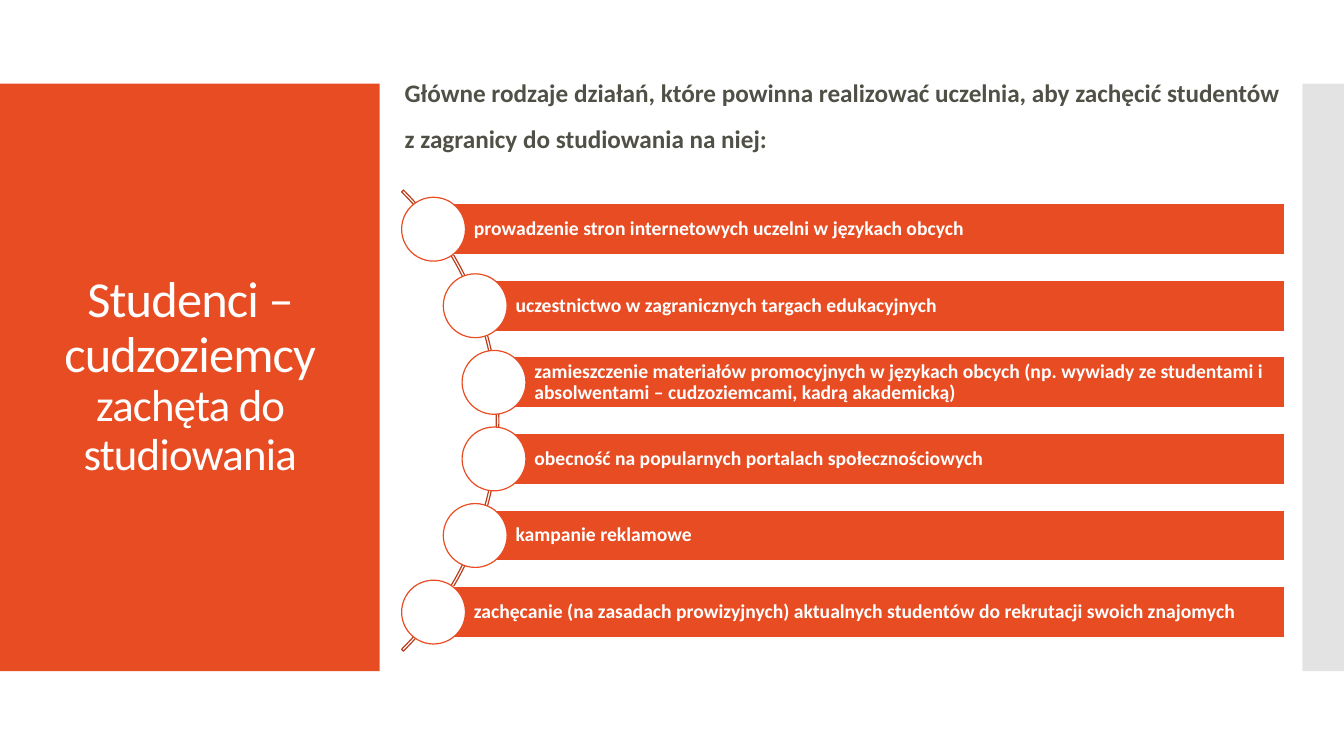
from math import sqrt
from lxml.etree import SubElement
from pptx import Presentation
from pptx.dml.color import RGBColor
from pptx.enum.shapes import MSO_SHAPE
from pptx.enum.text import MSO_ANCHOR, PP_ALIGN
from pptx.oxml.ns import qn
from pptx.util import Pt

COLORS = {"orange": "E84C22", "rust": "BA3D1B", "white": "FFFFFF",
          "grey": "C8C8C8", "text": "505046"}
FONT = "Calibri"
ACTIONS = [
    "prowadzenie stron internetowych uczelni w językach obcych",
    "uczestnictwo w zagranicznych targach edukacyjnych",
    "zamieszczenie materiałów promocyjnych w językach obcych (np. wywiady ze "
    "studentami i absolwentami – cudzoziemcami, kadrą akademicką)",
    "obecność na popularnych portalach społecznościowych",
    "kampanie reklamowe",
    "zachęcanie (na zasadach prowizyjnych) aktualnych studentów do rekrutacji "
    "swoich znajomych",
]


def rgb(name):
    return RGBColor.from_string(COLORS[name])


def add_box(s, kind, x, y, w, h, fill=None, line=None):
    sp = s.shapes.add_shape(kind, Pt(x), Pt(y), Pt(w), Pt(h))
    sp.shadow.inherit = False
    if fill:
        sp.fill.solid()
        sp.fill.fore_color.rgb = rgb(fill)
    else:
        sp.fill.background()
    if line:
        sp.line.color.rgb = rgb(line)
        sp.line.width = Pt(0.85)
    else:
        sp.line.fill.background()
    return sp


def add_run(p, text, size, color, bold=False):
    r = p.add_run()
    r.text = text
    r.font.name = FONT
    r.font.size = Pt(size)
    r.font.bold = bold
    r.font.color.rgb = rgb(color)
    return r


def add_text(s, x, y, w, h):
    tf = s.shapes.add_textbox(Pt(x), Pt(y), Pt(w), Pt(h)).text_frame
    tf.word_wrap = True
    return tf


def title_panel(s, x, y, w, h):
    add_box(s, MSO_SHAPE.RECTANGLE, x, y, w, h, "orange")
    tf = add_text(s, x + 20, y + 28.5, w - 39.5, h - 57.5)
    tf.vertical_anchor = MSO_ANCHOR.MIDDLE
    p = tf.paragraphs[0]
    p.alignment = PP_ALIGN.CENTER
    p.line_spacing = 0.9
    first = add_run(p, "Studenci – cudzoziemcy", 36, "white")
    p.add_line_break()
    second = add_run(p, "zachęta do studiowania", 32, "white")
    for r in (first, second):
        r._r.get_or_add_rPr().set("spc", "-60")


def side_strip(s, x, y, w, h):
    sp = add_box(s, MSO_SHAPE.RECTANGLE, x, y, w, h, "grey")
    color = sp._element.spPr.find(qn("a:solidFill"))[0]
    SubElement(color, qn("a:alpha")).set("val", "50000")


def heading(s, x, y, w, h):
    p = add_text(s, x, y, w, h).paragraphs[0]
    p.line_spacing = 1.5
    add_run(p, "Główne rodzaje działań, które powinna realizować uczelnia, aby "
               "zachęcić studentów z zagranicy do studiowania na niej:",
            18, "text", True)


def action_bar(s, x, y, w, h, text):
    sp = add_box(s, MSO_SHAPE.RECTANGLE, x, y, w, h, "orange", "white")
    tf = sp.text_frame
    tf.word_wrap = True
    tf.vertical_anchor = MSO_ANCHOR.MIDDLE
    tf.margin_left = Pt(28.8)
    tf.margin_right = tf.margin_top = tf.margin_bottom = Pt(2.8)
    p = tf.paragraphs[0]
    p.alignment = PP_ALIGN.LEFT
    p.line_spacing = 0.9
    add_run(p, text, 14, "white", True)


def action_list(s, x, y, w, h):
    arc_size, orbit, bar_h, circle = 465.8, 231, 36.5, 45.6
    cx, cy = x - 163.8, y + h / 2
    arc = add_box(s, MSO_SHAPE.BLOCK_ARC, cx - arc_size / 2, cy - arc_size / 2,
                  arc_size, arc_size, line="rust")
    for i, value in enumerate((189, 27, 0.004)):
        arc.adjustments[i] = value
    pitch = (h - circle) / (len(ACTIONS) - 1)
    for i, text in enumerate(ACTIONS):
        mid = y + circle / 2 + i * pitch
        left = cx + sqrt(orbit ** 2 - (mid - cy) ** 2)
        action_bar(s, left, mid - bar_h / 2, x + w - left, bar_h, text)
        add_box(s, MSO_SHAPE.OVAL, left - circle / 2, mid - circle / 2,
                circle, circle, "white", "orange")


def main():
    prs = Presentation()
    prs.slide_width, prs.slide_height = Pt(960), Pt(540)
    s = prs.slides.add_slide(prs.slide_layouts[6])
    title_panel(s, 0, 59.8, 271.2, 419.6)
    side_strip(s, 930.4, 59.8, 29.6, 419.6)
    heading(s, 282, 41, 640, 73)
    action_list(s, 287.3, 140.9, 630.2, 319.1)
    prs.save("out.pptx")


if __name__ == "__main__":
    main()
